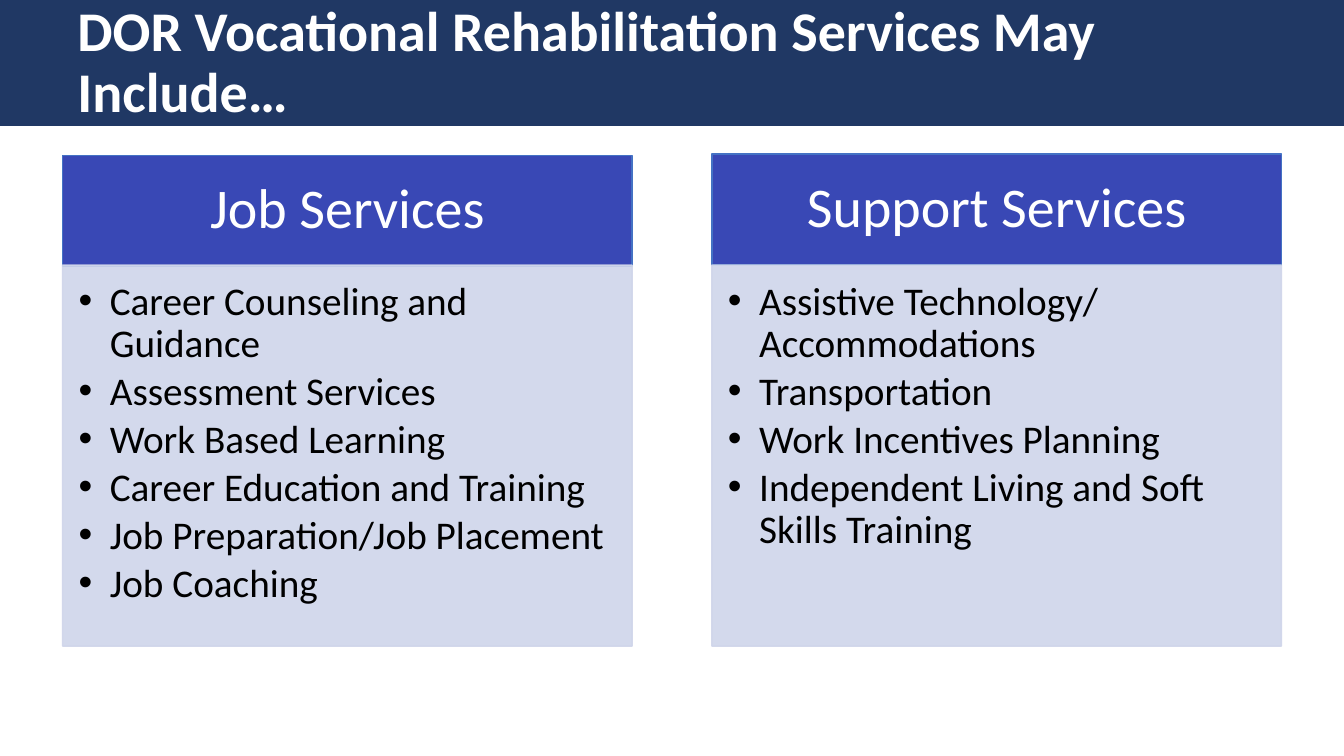
from lxml import etree
from pptx import Presentation
from pptx.dml.color import RGBColor
from pptx.enum.shapes import MSO_SHAPE
from pptx.enum.text import MSO_ANCHOR, PP_ALIGN
from pptx.oxml.ns import qn
from pptx.util import Inches, Pt

RECTANGLE = MSO_SHAPE.RECTANGLE
TOP, MIDDLE = MSO_ANCHOR.TOP, MSO_ANCHOR.MIDDLE
LEFT, CENTER = PP_ALIGN.LEFT, PP_ALIGN.CENTER

COLORS = {
    "banner": "203864",
    "heading": "3948B5",
    "heading_line": "4472C4",
    "panel": "CFD5EA",
    "white": "FFFFFF",
    "black": "000000",
}
COLUMN_WIDTH = 5.65
HEADING_HEIGHT = 1.1
PANEL_TOP, PANEL_HEIGHT = 2.63, 3.78

# Left, heading top, heading, services
COLUMNS = [
    (0.62, 1.54, "Job Services", [
        "Career Counseling and Guidance",
        "Assessment Services",
        "Work Based Learning",
        "Career Education and Training",
        "Job Preparation/Job Placement",
        "Job Coaching",
    ]),
    (7.06, 1.53, "Support Services", [
        "Assistive Technology/ Accommodations",
        "Transportation",
        "Work Incentives Planning",
        "Independent Living and Soft Skills Training",
    ]),
]


def color(name):
    return RGBColor.from_string(COLORS[name])


def add_rectangle(slide, bounds, fill, line=None):
    shape = slide.shapes.add_shape(RECTANGLE, *map(Inches, bounds))
    shape.shadow.inherit = False
    shape.fill.solid()
    shape.fill.fore_color.rgb = color(fill)
    if line:
        shape.line.color.rgb = color(line)
        shape.line.width = Pt(1)
    else:
        shape.line.fill.background()
    return shape


def set_opacity(shape, percent):
    """Apply one opacity to both the fill and the outline."""
    for solid_color in shape._element.spPr.iter(qn("a:srgbClr")):
        alpha = etree.SubElement(solid_color, qn("a:alpha"))
        alpha.set("val", str(percent * 1000))


def set_frame(frame, anchor, margins):
    frame.word_wrap = True
    frame.vertical_anchor = anchor
    (frame.margin_left, frame.margin_top,
     frame.margin_right, frame.margin_bottom) = map(Inches, margins)


def format_paragraph(paragraph, size, font_color, alignment=LEFT, bold=False):
    paragraph.alignment = alignment
    paragraph.line_spacing = 0.9
    paragraph.font.name = "Calibri"
    paragraph.font.size = Pt(size)
    paragraph.font.bold = bold
    paragraph.font.color.rgb = color(font_color)


def add_bullet(paragraph):
    properties = paragraph._p.get_or_add_pPr()
    properties.set("marL", str(Inches(0.31)))
    properties.set("indent", str(-Inches(0.31)))
    etree.SubElement(properties, qn("a:buFont")).set("typeface", "Arial")
    etree.SubElement(properties, qn("a:buChar")).set("char", "•")


def add_title(slide, text):
    add_rectangle(slide, (0, 0, 13.33, 1.25), "banner")
    box = slide.shapes.add_textbox(*map(Inches, (0.67, 0, 12.35, 1.27)))
    set_frame(box.text_frame, MIDDLE, (0.1, 0.05, 0.1, 0.05))
    paragraph = box.text_frame.paragraphs[0]
    paragraph.text = text
    format_paragraph(paragraph, 40, "white", bold=True)


def add_heading(slide, left, top, text):
    shape = add_rectangle(slide, (left, top, COLUMN_WIDTH, HEADING_HEIGHT),
                          "heading", "heading_line")
    set_frame(shape.text_frame, MIDDLE, (0.31, 0.18, 0.31, 0.18))
    paragraph = shape.text_frame.paragraphs[0]
    paragraph.text = text
    format_paragraph(paragraph, 40, "white", CENTER)


def add_service_panel(slide, left, services):
    shape = add_rectangle(slide, (left, PANEL_TOP, COLUMN_WIDTH, PANEL_HEIGHT),
                          "panel", "panel")
    set_opacity(shape, 90)
    frame = shape.text_frame
    set_frame(frame, TOP, (0.16, 0.16, 0.22, 0.24))
    frame.text = "\n".join(services)
    for paragraph in frame.paragraphs:
        paragraph.level = 1
        add_bullet(paragraph)
        format_paragraph(paragraph, 28, "black")
        paragraph.space_after = Pt(4)


def main():
    presentation = Presentation()
    presentation.slide_width = Inches(13.33)
    presentation.slide_height = Inches(7.5)
    slide = presentation.slides.add_slide(presentation.slide_layouts[6])

    add_title(slide, "DOR Vocational Rehabilitation Services May Include…")
    for left, heading_top, heading, services in COLUMNS:
        add_heading(slide, left, heading_top, heading)
        add_service_panel(slide, left, services)

    presentation.save("out.pptx")


if __name__ == "__main__":
    main()
